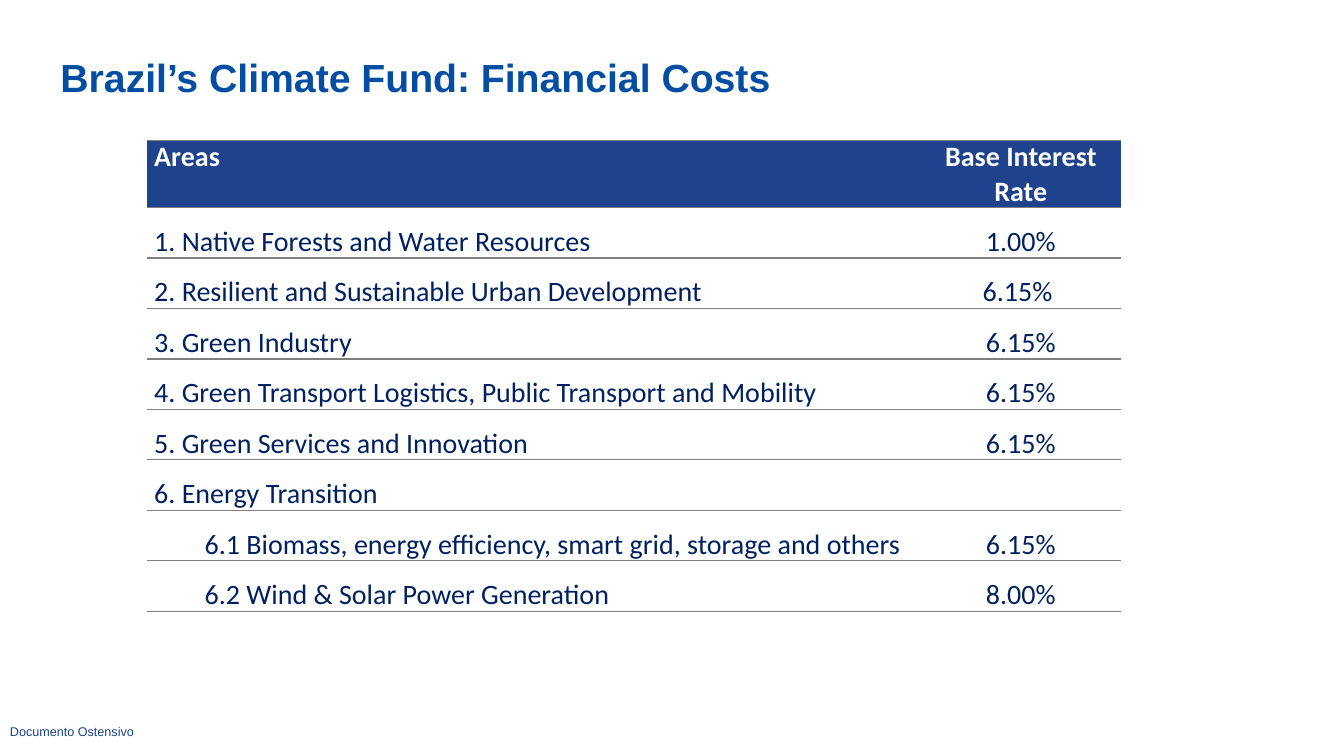
from pptx import Presentation
from pptx.dml.color import RGBColor
from pptx.enum.text import MSO_ANCHOR, PP_ALIGN
from pptx.oxml import parse_xml
from pptx.oxml.ns import nsdecls
from pptx.util import Inches, Pt

MIDDLE, TOP = MSO_ANCHOR.MIDDLE, MSO_ANCHOR.TOP
LEFT, CENTER = PP_ALIGN.LEFT, PP_ALIGN.CENTER
NAVY, BLUE, INK, WHITE, GREY = "1E428B", "034EA2", "002060", "FFFFFF", "7F7F7F"


def color(code):
    return RGBColor.from_string(code)


def write(frame, text, size, font, code, bold=False):
    para = frame.paragraphs[0]
    run = para.add_run()
    run.text = text
    run.font.size = Pt(size)
    run.font.name = font
    run.font.bold = bold
    run.font.color.rgb = color(code)
    return para


deck = Presentation()
deck.slide_width = Inches(13.33)
deck.slide_height = Inches(7.5)
slide = deck.slides.add_slide(deck.slide_layouts[6])

title = slide.shapes.add_textbox(Inches(0.54), Inches(0.47), Inches(11.8), Inches(0.58)).text_frame
title.word_wrap = True
title.vertical_anchor = MIDDLE
title.margin_left = title.margin_right = Inches(0.06)
title.margin_top = title.margin_bottom = Inches(0.06)
write(title, "Brazil’s Climate Fund: Financial Costs", 28, "Arial", BLUE, True).space_after = Pt(2)

rates = [
    ("Areas", "Base Interest Rate"),
    ("1. Native Forests and Water Resources", "1.00%"),
    ("2. Resilient and Sustainable Urban Development", "6.15% "),
    ("3. Green Industry", "6.15%"),
    ("4. Green Transport Logistics, Public Transport and Mobility", "6.15%"),
    ("5. Green Services and Innovation", "6.15%"),
    ("6. Energy Transition", ""),
    ("6.1 Biomass, energy efficiency, smart grid, storage and others", "6.15%"),
    ("6.2 Wind & Solar Power Generation", "8.00%"),
]
table = slide.shapes.add_table(
    len(rates), 2, Inches(1.46), Inches(1.39), Inches(9.66), Inches(4.67)).table
table.first_row = False
table.horz_banding = False
table.columns[0].width = Inches(7.67)
table.columns[1].width = Inches(1.99)

for r, row in enumerate(rates):
    head = r == 0
    table.rows[r].height = Inches(0.67 if head else 0.5)
    for c, text in enumerate(row):
        cell = table.cell(r, c)
        cell.margin_left = cell.margin_right = Inches(0.07)
        cell.margin_top = cell.margin_bottom = 0
        cell.vertical_anchor = TOP if head else MIDDLE
        if head:
            cell.fill.solid()
            cell.fill.fore_color.rgb = color(NAVY)
        else:
            cell.fill.background()
        if text:
            para = write(cell.text_frame, text, 20, "Calibri", WHITE if head else INK, head)
            para.alignment = CENTER if c else LEFT
            para.line_spacing = 1.0 if head else 1.5
            if text.startswith("6.") and c == 0 and text[2] != " ":
                para.level = 1
                props = para._p.get_or_add_pPr()
                props.set("marL", str(Inches(0.5)))
                props.set("indent", "0")
        props = cell._tc.get_or_add_tcPr()
        for i, side in enumerate("LRTB"):
            paint = "<a:noFill/>"
            if side in "TB":
                paint = f'<a:solidFill><a:srgbClr val="{GREY}"/></a:solidFill>'
            props.insert(i, parse_xml(
                f'<a:ln{side} w="{Pt(1)}" {nsdecls("a")}>{paint}</a:ln{side}>'))

note = slide.shapes.add_textbox(0, Inches(6.81), Inches(7.29), Inches(0.92)).text_frame
note.word_wrap = True
note.vertical_anchor = MIDDLE
write(note, "Documento Ostensivo", 9, "Arial", NAVY).line_spacing = 0.9

deck.save("out.pptx")
